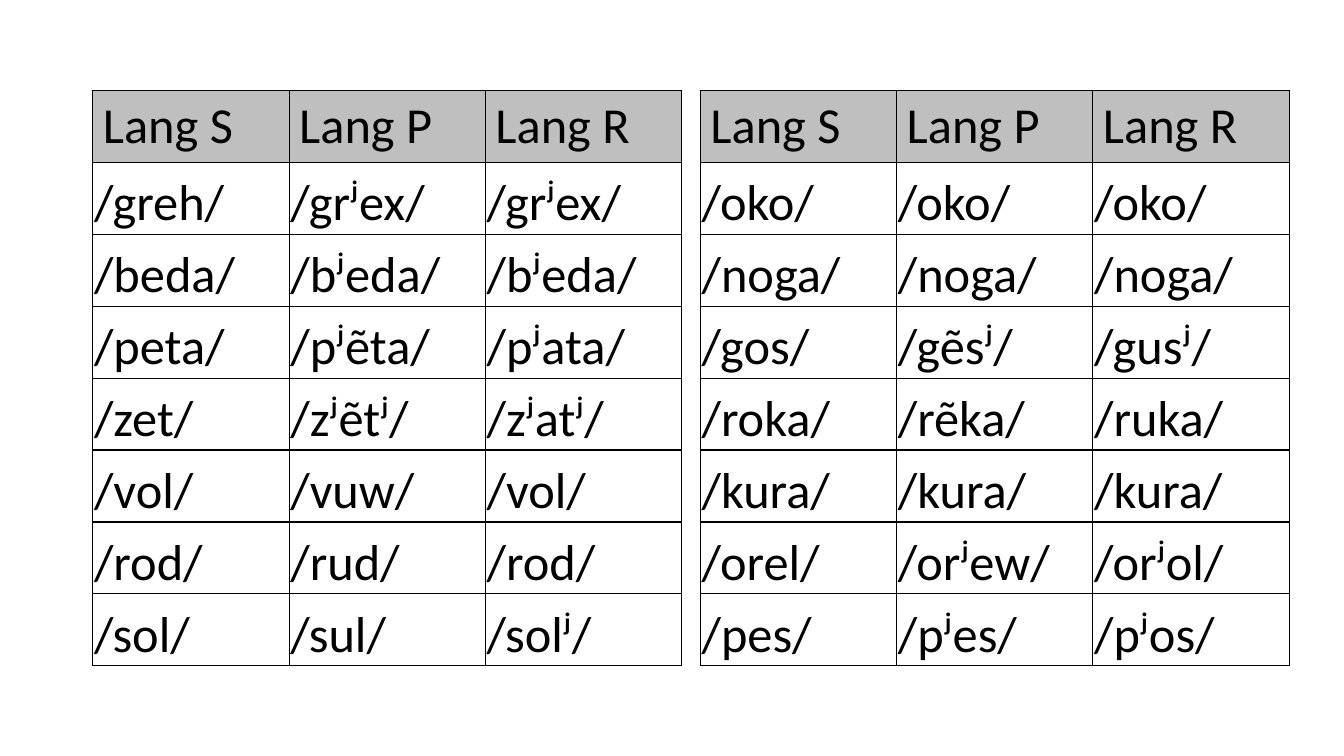
from lxml import etree
from pptx import Presentation
from pptx.dml.color import RGBColor
from pptx.enum.text import MSO_ANCHOR
from pptx.oxml.ns import qn
from pptx.util import Cm, Pt

BLACK = RGBColor(0x00, 0x00, 0x00)
GREY = RGBColor(0xBF, 0xBF, 0xBF)
TOP = MSO_ANCHOR.TOP
BOTTOM = MSO_ANCHOR.BOTTOM

FONT = {"name": "Calibri", "size": Pt(36), "bold": False}
HEAD = {"vertical_anchor": TOP}
BODY = {
    "vertical_anchor": BOTTOM,
    "margin_left": Cm(0.03),
    "margin_right": Cm(0.03),
    "margin_top": Cm(0.03),
    "margin_bottom": Cm(0),
}
PLAIN = {"first_row": False, "horz_banding": False}

LANGS = ["Lang S", "Lang P", "Lang R"]
FRONT = [
    ["/greh/", "/grʲex/", "/grʲex/"],
    ["/beda/", "/bʲeda/", "/bʲeda/"],
    ["/peta/", "/pʲẽta/", "/pʲata/"],
    ["/zet/", "/zʲẽtʲ/", "/zʲatʲ/"],
    ["/vol/", "/vuw/", "/vol/"],
    ["/rod/", "/rud/", "/rod/"],
    ["/sol/", "/sul/", "/solʲ/"],
]
BACK = [
    ["/oko/", "/oko/", "/oko/"],
    ["/noga/", "/noga/", "/noga/"],
    ["/gos/", "/gẽsʲ/", "/gusʲ/"],
    ["/roka/", "/rẽka/", "/ruka/"],
    ["/kura/", "/kura/", "/kura/"],
    ["/orel/", "/orʲew/", "/orʲol/"],
    ["/pes/", "/pʲes/", "/pʲos/"],
]


def apply(item, form):
    for key, value in form.items():
        setattr(item, key, value)


def frame(cell):
    props = cell._tc.get_or_add_tcPr()
    for spot, side in enumerate(("lnL", "lnR", "lnT", "lnB")):
        line = etree.Element(qn(f"a:{side}"), w=str(Pt(1)))
        fill = etree.SubElement(line, qn("a:solidFill"))
        etree.SubElement(fill, qn("a:srgbClr"), val=str(BLACK))
        props.insert(spot, line)


def fill_cell(cell, text, head):
    cell.text = text
    apply(cell, HEAD if head else BODY)
    font = cell.text_frame.paragraphs[0].runs[0].font
    apply(font, FONT)
    font.color.rgb = BLACK
    if head:
        cell.fill.solid()
        cell.fill.fore_color.rgb = GREY
    else:
        cell.fill.background()
    frame(cell)


def add_words(slide, words, left, top, width, height):
    rows = [LANGS] + words
    table = slide.shapes.add_table(
        len(rows), len(LANGS), left, top, width, height
    ).table
    apply(table, PLAIN)
    for col in table.columns:
        col.width = width // len(LANGS)
    for row in table.rows:
        row.height = height // len(rows)
    for r, texts in enumerate(rows):
        for c, text in enumerate(texts):
            fill_cell(table.cell(r, c), text, r == 0)


def main():
    deck = Presentation()
    deck.slide_width = Cm(33.87)
    deck.slide_height = Cm(19.05)
    slide = deck.slides.add_slide(deck.slide_layouts[6])
    for words, left in ((FRONT, Cm(2.34)), (BACK, Cm(17.65))):
        add_words(slide, words, left, Cm(2.28), Cm(14.84), Cm(14.5))
    deck.save("out.pptx")


if __name__ == "__main__":
    main()
